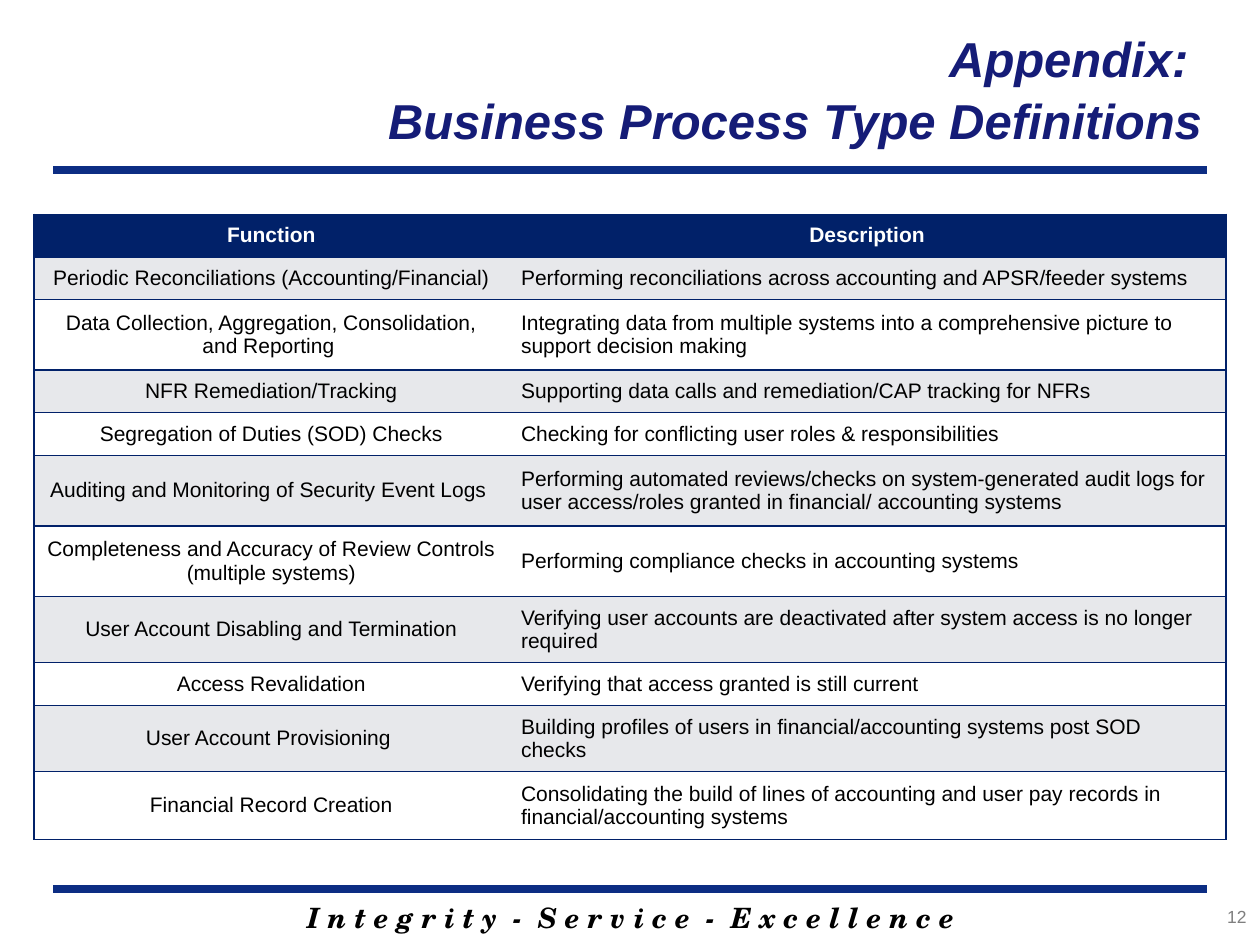
from lxml.etree import SubElement
from pptx import Presentation
from pptx.dml.color import RGBColor
from pptx.enum.shapes import MSO_CONNECTOR as Connector
from pptx.enum.text import MSO_ANCHOR as Anchor, MSO_AUTO_SIZE as AutoSize, PP_ALIGN as Align
from pptx.oxml.ns import qn
from pptx.util import Cm, Pt

NAVY, RULE_BLUE, TITLE_BLUE = "012169", "0C2D83", "151C77"
BLACK, WHITE, BAND, GREY = "000000", "FFFFFF", "E7E8EB", "7F7F7F"
SHORT, TALL, LAST = 0.86, 1.42, 1.37
MOTTO = ["I n t e g r i t y", "S e r v i c e", "E x c e l l e n c e"]
HEADINGS = ("Function", "Description")
DEFINITIONS = [
    (SHORT, "Periodic Reconciliations (Accounting/Financial)",
     "Performing reconciliations across accounting and APSR/feeder systems"),
    (TALL, "Data Collection, Aggregation, Consolidation, and Reporting ",
     "Integrating data from multiple systems into a comprehensive picture to support decision making"),
    (SHORT, "NFR Remediation/Tracking",
     "Supporting data calls and remediation/CAP tracking for NFRs"),
    (SHORT, "Segregation of Duties (SOD) Checks",
     "Checking for conflicting user roles & responsibilities"),
    (TALL, "Auditing and Monitoring of Security Event Logs ",
     "Performing automated reviews/checks on system-generated audit logs for user access/roles "
     "granted in financial/ accounting systems"),
    (TALL, "Completeness and Accuracy of Review Controls \n(multiple systems)",
     "Performing compliance checks in accounting systems"),
    (SHORT, "User Account Disabling and Termination",
     "Verifying user accounts are deactivated after system access is no longer required"),
    (SHORT, "Access Revalidation", "Verifying that access granted is still current"),
    (SHORT, "User Account Provisioning ",
     "Building profiles of users in financial/accounting systems post SOD checks"),
    (LAST, "Financial Record Creation",
     "Consolidating the build of lines of accounting and user pay records in "
     "financial/accounting systems"),
]


def color(hex_value):
    return RGBColor.from_string(hex_value)


def add_run(paragraph, text, size, hex_value, bold=False, italic=False, face="Arial"):
    run = paragraph.add_run()
    run.text = text
    font = run.font
    font.name, font.size, font.bold, font.italic = face, Pt(size), bold, italic
    font.color.rgb = color(hex_value)
    return run


def write_lines(frame, text, align, *style):
    for index, line in enumerate(text.split("\n")):
        paragraph = frame.add_paragraph() if index else frame.paragraphs[0]
        paragraph.alignment = align
        add_run(paragraph, line, *style)


def add_frame(slide, box, anchor=Anchor.TOP):
    frame = slide.shapes.add_textbox(*map(Cm, box)).text_frame
    frame.word_wrap = True
    frame.vertical_anchor = anchor
    return frame


def add_rule(slide, left, top, width):
    rule = slide.shapes.add_connector(
        Connector.STRAIGHT, Cm(left), Cm(top), Cm(left + width), Cm(top))
    rule.line.color.rgb = color(RULE_BLUE)
    rule.line.width = Pt(4.5)
    SubElement(rule._element.spPr, qn("a:effectLst"))


def add_header(slide, left, top, width, height):
    frame = add_frame(slide, (left + 3.55, top, width - 3.4, height), Anchor.MIDDLE)
    write_lines(frame, "Appendix: \nBusiness Process Type Definitions",
                Align.RIGHT, 28, TITLE_BLUE, True, True)
    frame.paragraphs[1].space_before = Pt(1.5)
    add_rule(slide, left, top + height + 0.05, width)


def add_footer(slide, left, top, width):
    add_rule(slide, left, top, width)
    frame = add_frame(slide, (left + 2.54, top + 0.1, width - 5.05, 0.94))
    frame.auto_size = AutoSize.SHAPE_TO_FIT_TEXT
    motto = frame.paragraphs[0]
    motto.alignment = Align.CENTER
    style = (16, BLACK, True, True, "TeX Gyre Schola")
    for index, word in enumerate(MOTTO):
        for part in (" ", "-", " ") if index else ():
            run = add_run(motto, part, *style)
            if part == " ":
                run._r.get_or_add_rPr().set("spc", "445")
        add_run(motto, word, *style)
    number = add_frame(slide, (left + 21.13, top + 0.2, 3.18, 0.84))
    write_lines(number, "12", Align.RIGHT, 10, GREY)


def set_borders(cell, visible):
    properties = cell._tc.get_or_add_tcPr()
    for side in "LRTB":
        border = SubElement(properties, qn(f"a:ln{side}"), w=str(Pt(1)))
        if side in visible:
            fill = SubElement(border, qn("a:solidFill"))
            SubElement(fill, qn("a:srgbClr"), val=NAVY)
        else:
            SubElement(border, qn("a:noFill"))


def add_definitions(slide, left, top, column_widths):
    rows = [(SHORT, *HEADINGS), *DEFINITIONS]
    heights = [row[0] for row in rows]
    table = slide.shapes.add_table(
        len(rows), len(column_widths), Cm(left), Cm(top),
        Cm(sum(column_widths)), Cm(sum(heights))).table
    for column, width in zip(table.columns, column_widths):
        column.width = Cm(width)
    for row_index, (height, *texts) in enumerate(rows):
        table.rows[row_index].height = Cm(height)
        heading = row_index == 0
        background = NAVY if heading else (BAND if row_index % 2 else WHITE)
        for column_index, text in enumerate(texts):
            cell = table.cell(row_index, column_index)
            set_borders(cell, "RTB" if column_index else "LTB")
            cell.fill.solid()
            cell.fill.fore_color.rgb = color(background)
            cell.vertical_anchor = Anchor.MIDDLE
            cell.margin_top = cell.margin_bottom = Cm(0.16)
            align = Align.LEFT if column_index and not heading else Align.CENTER
            write_lines(cell.text_frame, text, align, 12,
                        WHITE if heading else BLACK, heading)


def main():
    deck = Presentation()
    deck.slide_width, deck.slide_height = Cm(25.4), Cm(19.05)
    slide = deck.slides.add_slide(deck.slide_layouts[6])
    add_footer(slide, 1.07, 17.93, 23.26)
    add_header(slide, 1.07, 0.2, 23.26, 3.18)
    add_definitions(slide, 0.69, 4.32, (9.56, 14.46))
    deck.save("out.pptx")


if __name__ == "__main__":
    main()
